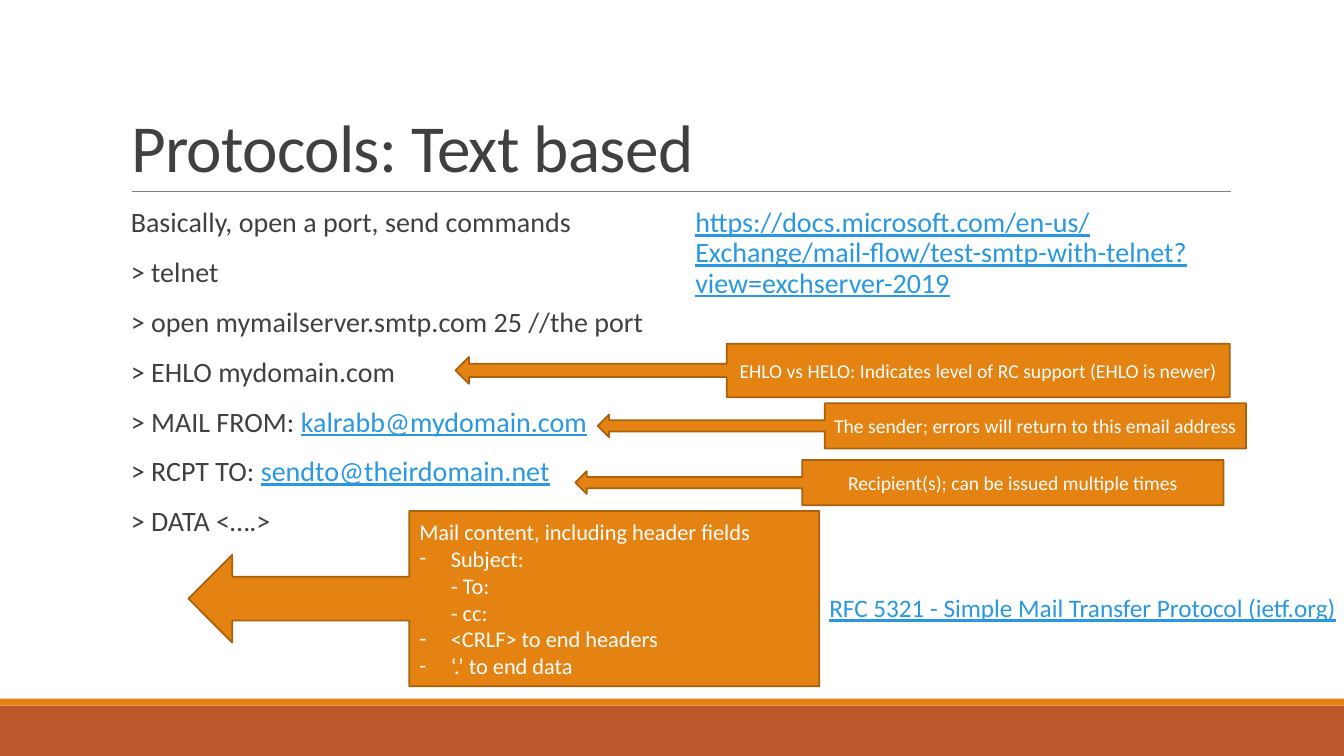
from lxml import etree
from pptx import Presentation
from pptx.dml.color import RGBColor
from pptx.enum.shapes import MSO_CONNECTOR, MSO_SHAPE
from pptx.enum.text import MSO_ANCHOR, MSO_AUTO_SIZE, PP_ALIGN
from pptx.oxml.ns import qn
from pptx.util import Pt

LEFT, CENTER = PP_ALIGN.LEFT, PP_ALIGN.CENTER
TOP, MIDDLE, BOTTOM = MSO_ANCHOR.TOP, MSO_ANCHOR.MIDDLE, MSO_ANCHOR.BOTTOM
RECT, CALLOUT = MSO_SHAPE.RECTANGLE, MSO_SHAPE.LEFT_ARROW_CALLOUT
WIDE, HIGH = 960, 540
FONT = "Calibri"
DARK, WHITE, LINK = "404040", "FFFFFF", "2998E3"
ORANGE, BROWN, RUST, GRAY = "E48312", "A9610D", "BD582C", "808080"

STEPS = [
    "Basically, open a port, send commands",
    "> telnet",
    "> open mymailserver.smtp.com 25 //the port",
    "> EHLO mydomain.com",
    ("> MAIL FROM: ", "kalrabb@mydomain.com"),
    ("> RCPT TO: ", "sendto@theirdomain.net"),
    "> DATA <….>",
]
GUIDE = ("https://docs.microsoft.com/en-us/Exchange/mail-flow/"
         "test-smtp-with-telnet?view=exchserver-2019")
NOTES = [
    ((325.4, 245.5, 553, 38.2),
     "EHLO vs HELO: Indicates level of RC support (EHLO is newer)"),
    ((427, 288, 463, 32.4),
     "The sender; errors will return to this email address"),
    ((411, 328.5, 463, 32.4),
     "Recipient(s); can be issued multiple times"),
]
MAIL = [
    "Mail content, including header fields",
    "Subject:\n- To:\n- cc:",
    "<CRLF> to end headers",
    "‘.’ to end data",
]


def color(code):
    return RGBColor.from_string(code)


def place(box):
    return [Pt(n) for n in box]


def add_run(para, text, size, tint, track=0):
    run = para.add_run()
    run.text = text
    font = run.font
    font.name, font.size = FONT, Pt(size)
    font.color.rgb = color(tint)
    font.underline = True if tint == LINK else None
    if track:
        run._r.get_or_add_rPr().set("spc", str(track))


def add_mark(para, mark, indent):
    props = para._p.get_or_add_pPr()
    props.set("marL", str(Pt(indent)))
    props.set("indent", str(-Pt(indent)))
    etree.SubElement(props, qn("a:buFont")).set("typeface", FONT)
    etree.SubElement(props, qn("a:buChar")).set("char", mark)


def put(frame, lines, size=16, tint=DARK, align=LEFT, anchor=TOP, wrap=True,
        space=None, before=0, after=0, mark=None, indent=0, head=0, track=0):
    """Write lines; a pair is plain text and a link, head counts unmarked lines."""
    frame.word_wrap = wrap
    frame.vertical_anchor = anchor
    for i, line in enumerate(lines):
        para = frame.add_paragraph() if i else frame.paragraphs[0]
        if mark and i >= head:
            add_mark(para, mark, indent)
        para.alignment = align
        if space:
            para.line_spacing = space
        para.space_before = Pt(before if i else 0)
        para.space_after = Pt(after)
        plain, link = (line, "") if isinstance(line, str) else line
        for j, part in enumerate(plain.split("\n")):
            if j:
                para.add_line_break()
            if part:
                add_run(para, part, size, tint, track)
        if link:
            add_run(para, link, size, LINK)


def add_form(slide, kind, box, fill, edge=None):
    form = slide.shapes.add_shape(kind, *place(box))
    form.shadow.inherit = False
    form.fill.solid()
    form.fill.fore_color.rgb = color(fill)
    if edge:
        form.line.color.rgb = color(edge)
        form.line.width = Pt(1.25)
    else:
        form.line.fill.background()
    return form


def add_foot(slide, box):
    left, top, width, height = box
    band = 5
    add_form(slide, RECT, (left, top + band, width, height - band), RUST)
    add_form(slide, RECT, (left, top, width, band), ORANGE)


def add_title(slide, box, text):
    left, top, width, height = box
    base = top + height
    ends = place((left + 7.7, base, left + width + 0.7, base))
    rule = slide.shapes.add_connector(MSO_CONNECTOR.STRAIGHT, *ends)
    rule.line.color.rgb = color(GRAY)
    rule.line.width = Pt(0.5)
    etree.SubElement(rule._element.spPr, qn("a:effectLst"))
    title = slide.shapes.title
    title.left, title.top, title.width, title.height = place(box)
    title.text_frame.auto_size = MSO_AUTO_SIZE.NONE
    put(title.text_frame, [text], size=48, anchor=BOTTOM, space=0.85, track=-50)


def add_body(slide, box, lines):
    frame = slide.shapes.add_textbox(*place(box)).text_frame
    frame.margin_left, frame.margin_right = Pt(7.2), 0
    put(frame, lines, size=20, space=0.9, before=12, after=2)


def add_note(slide, box, lines, inset=7.2, **fmt):
    note = add_form(slide, CALLOUT, box, ORANGE, BROWN)
    frame = note.text_frame
    frame.margin_left = frame.margin_right = Pt(inset)
    put(frame, lines, tint=WHITE, anchor=MIDDLE, **fmt)


def add_source(slide, box, text):
    frame = slide.shapes.add_textbox(*place(box)).text_frame
    frame.margin_right = 0
    put(frame, [("", text)], size=18)


def main():
    deck = Presentation()
    deck.slide_width, deck.slide_height = Pt(WIDE), Pt(HIGH)
    slide = deck.slides.add_slide(deck.slide_layouts[5])
    add_foot(slide, (0, 499, WIDE, 41))
    add_title(slide, (86.4, 22.6, 792, 114.2), "Protocols: Text based")
    for left, lines in ((86.4, STEPS), (489.6, [("", GUIDE)])):
        add_body(slide, (left, 145.4, 388.8, 316.8), lines)
    for box, text in NOTES:
        add_note(slide, box, [text], inset=3, size=14, align=CENTER)
    add_note(slide, (134.6, 365, 450.7, 125.3), MAIL,
             mark="-", indent=22.5, head=1)
    add_source(slide, (585.3, 419.8, 372, 28.8),
               "RFC 5321 - Simple Mail Transfer Protocol (ietf.org)")
    deck.save("out.pptx")


if __name__ == "__main__":
    main()
